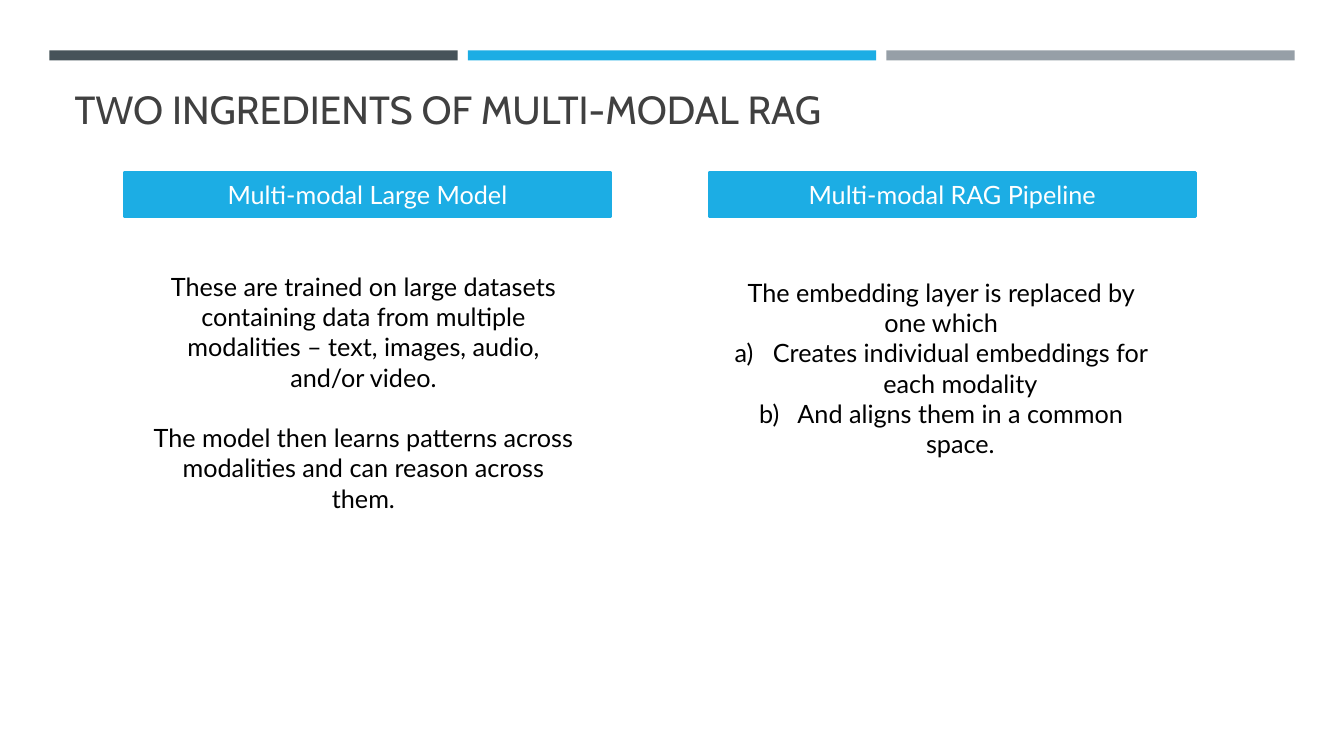
from lxml import etree
from pptx import Presentation
from pptx.dml.color import RGBColor
from pptx.enum.shapes import MSO_SHAPE as Shape
from pptx.enum.text import MSO_ANCHOR as Anchor, MSO_AUTO_SIZE as Fit, PP_ALIGN as Align
from pptx.oxml.ns import qn
from pptx.util import Inches, Pt

SLATE = RGBColor(0x46, 0x53, 0x59)
BLUE = RGBColor(0x1C, 0xAD, 0xE4)
GREY = RGBColor(0x96, 0x9F, 0xA7)
DARK = RGBColor(0x40, 0x40, 0x40)
BLACK = RGBColor(0, 0, 0)
WHITE = RGBColor(255, 255, 255)


def place(shape, left, top, width, height):
    shape.left, shape.top = Inches(left), Inches(top)
    shape.width, shape.height = Inches(width), Inches(height)


def add_run(para, text, size, font, color):
    run = para.add_run()
    run.text = text
    run.font.size, run.font.name = Pt(size), font
    run.font.color.rgb = color


def add_rect(slide, color, box):
    rect = slide.shapes.add_shape(Shape.RECTANGLE, *map(Inches, box))
    rect.shadow.inherit = False
    rect.fill.solid()
    rect.fill.fore_color.rgb = color
    rect.line.fill.background()
    return rect


def add_bars(slide, left, top, width, gap):
    """Three coloured bars across the top."""
    for i, color in enumerate((SLATE, BLUE, GREY)):
        add_rect(slide, color, (left + i * (width + gap), top, width, 0.1))


def fill_title(slide, text, box):
    title = slide.shapes.title
    place(title, *box)
    frame = title.text_frame
    frame.word_wrap, frame.auto_size = True, Fit.NONE
    frame.vertical_anchor = Anchor.BOTTOM
    para = frame.paragraphs[0]
    para.alignment = Align.LEFT
    add_run(para, text, 28, "Cabin", DARK)


def add_head(slide, text, box):
    """Blue heading band above a column."""
    head = add_rect(slide, BLUE, box)
    head.line.color.rgb = BLUE
    head.line.width = Pt(1.75)
    frame = head.text_frame
    frame.vertical_anchor = Anchor.MIDDLE
    para = frame.paragraphs[0]
    para.alignment = Align.CENTER
    add_run(para, text, 18, "Lato", WHITE)


def set_bullet(para, letter):
    props = para._p.get_or_add_pPr()
    indent = Inches(0.38) if letter else 0
    props.set("marL", str(indent))
    props.set("indent", str(-indent))
    if letter:
        font = etree.SubElement(props, qn("a:buFont"))
        font.set("typeface", "+mj-lt")
        mark = etree.SubElement(props, qn("a:buAutoNum"))
        mark.set("type", "alphaLcParenR")
    else:
        etree.SubElement(props, qn("a:buNone"))


def fill_body(body, items, box):
    """Centred text; each item is (text, lettered, space before)."""
    place(body, *box)
    frame = body.text_frame
    frame.word_wrap, frame.auto_size = True, Fit.SHAPE_TO_FIT_TEXT
    frame.vertical_anchor = Anchor.TOP
    for i, (text, letter, space) in enumerate(items):
        para = frame.add_paragraph() if i else frame.paragraphs[0]
        para.alignment = Align.CENTER
        para.space_before, para.space_after = Pt(space), Pt(0)
        para.line_spacing = 1.0
        set_bullet(para, letter)
        add_run(para, text, 18, "Lato", BLACK)


MODEL = [
    ("These are trained on large datasets containing data from multiple "
     "modalities – text, images, audio, and/or video.", False, 0),
    ("The model then learns patterns across modalities and can reason "
     "across them.", False, 21.6),
]
PIPELINE = [
    ("The embedding layer is replaced by one which", False, 0),
    ("Creates individual embeddings for each modality", True, 0),
    ("And aligns them in a common space.", True, 0),
]


def main():
    deck = Presentation()
    deck.slide_width, deck.slide_height = Inches(13.33), Inches(7.5)
    slide = deck.slides.add_slide(deck.slide_layouts[3])  # two content
    add_bars(slide, 0.49, 0.5, 4.05, 0.1)
    fill_title(slide, "TWO INGREDIENTS OF MULTI-MODAL RAG", (0.64, 0.77, 12.06, 0.59))

    # Left column
    add_head(slide, "Multi-modal Large Model", (1.23, 1.71, 4.83, 0.44))
    fill_body(slide.placeholders[1], MODEL, (1.37, 2.64, 4.47, 2.2))

    # Right column
    add_head(slide, "Multi-modal RAG Pipeline", (7.03, 1.71, 4.83, 0.44))
    fill_body(slide.placeholders[2], PIPELINE, (7.1, 2.7, 4.47, 1.9))

    deck.save("out.pptx")


if __name__ == "__main__":
    main()
